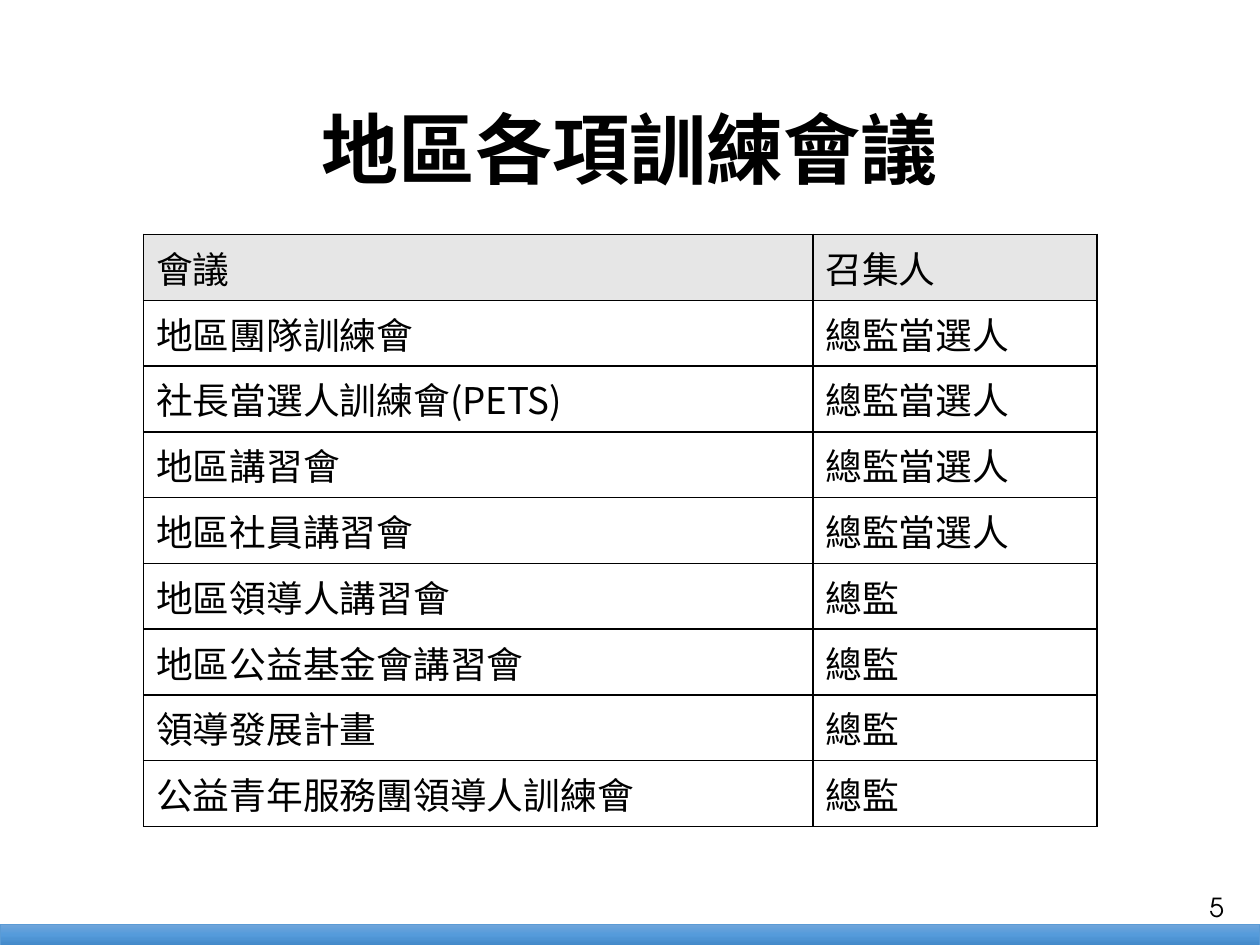
from copy import deepcopy
from lxml import etree
from pptx import Presentation
from pptx.dml.color import RGBColor
from pptx.enum.shapes import MSO_SHAPE
from pptx.enum.text import MSO_ANCHOR, PP_ALIGN
from pptx.oxml.ns import qn
from pptx.util import Pt

RECT = MSO_SHAPE.RECTANGLE
MID = MSO_ANCHOR.MIDDLE
CENTER = PP_ALIGN.CENTER

TITLE = "地區各項訓練會議"
PAGE = "5"
ELECT, CHIEF = "總監當選人", "總監"
ROWS = [
    ("會議", "召集人"),
    ("地區團隊訓練會", ELECT),
    ("社長當選人訓練會(PETS)", ELECT),
    ("地區講習會", ELECT),
    ("地區社員講習會", ELECT),
    ("地區領導人講習會", CHIEF),
    ("地區公益基金會講習會", CHIEF),
    ("領導發展計畫", CHIEF),
    ("公益青年服務團領導人訓練會", CHIEF),
]
COLS = [382.5, 162.5]
ROW_H = 37.6
STOPS = [(0, "71A6DB"), (0.5, "559BDB"), (1, "448ACA")]
HEAD = {"name": "Calibri", "size": Pt(44), "bold": True}
CELL = {"name": "Noto Sans CJK JP", "size": Pt(21), "bold": False}
FOOT = {"name": "TeX Gyre Adventor", "size": Pt(15), "bold": False}


def color(code):
    return RGBColor.from_string(code)


def box(*nums):
    return [Pt(n) for n in nums]


def write(frame, text, form, **para):
    par = frame.paragraphs[0]
    run = par.add_run()
    run.text = text
    for key, val in form.items():
        setattr(run.font, key, val)
    run.font.color.rgb = color("000000")
    for key, val in para.items():
        setattr(par, key, val)
    return run


def border(cell):
    props = cell._tc.get_or_add_tcPr()
    for side in ("lnL", "lnR", "lnT", "lnB"):
        line = etree.SubElement(props, qn("a:" + side), w=str(Pt(1)))
        fill = etree.SubElement(line, qn("a:solidFill"))
        etree.SubElement(fill, qn("a:srgbClr"), val="000000")


def add_bar(slide):
    bar = slide.shapes.add_shape(RECT, *box(0, 528, 720, 12))
    bar.shadow.inherit = False
    bar.line.color.rgb = color("5B9BD5")
    bar.line.width = Pt(0.5)
    bar.fill.gradient()
    bar.fill.gradient_angle = 270
    first = bar._element.spPr.find(".//" + qn("a:gs"))
    first.addnext(deepcopy(first))
    for stop, (pos, code) in zip(bar.fill.gradient_stops, STOPS):
        stop.position = pos
        stop.color.rgb = color(code)


def add_page(slide):
    frame = slide.shapes.add_textbox(*box(680.5, 506, 29.5, 23)).text_frame
    frame.word_wrap = True
    frame.margin_left = frame.margin_right = Pt(5)
    frame.margin_top = frame.margin_bottom = Pt(3)
    write(frame, PAGE, FOOT, alignment=CENTER)


def add_title(slide):
    title = slide.shapes.title
    title.left, title.top, title.width, title.height = box(54, 43, 612, 90)
    title.text_frame.vertical_anchor = MID
    write(title.text_frame, TITLE, HEAD, alignment=CENTER, line_spacing=0.9)


def add_grid(slide):
    area = box(82, 134, sum(COLS), ROW_H * len(ROWS))
    grid = slide.shapes.add_table(len(ROWS), len(COLS), *area).table
    grid.first_row = grid.horz_banding = False
    for col, width in zip(grid.columns, COLS):
        col.width = Pt(width)
    for r, row in enumerate(ROWS):
        grid.rows[r].height = Pt(ROW_H)
        for c, text in enumerate(row):
            cell = grid.cell(r, c)
            border(cell)
            if r == 0:
                cell.fill.solid()
                cell.fill.fore_color.rgb = color("E6E6E6")
            else:
                cell.fill.background()
            run = write(cell.text_frame, text, CELL)
            props = run._r.get_or_add_rPr()
            etree.SubElement(props, qn("a:ea"), typeface=CELL["name"])
            props = cell.text_frame.paragraphs[0]._p.get_or_add_pPr()
            props.set("marL", str(Pt(19)))
            props.set("indent", str(-Pt(19)))


def main():
    deck = Presentation()
    deck.slide_width, deck.slide_height = box(720, 540)
    slide = deck.slides.add_slide(deck.slide_layouts[5])
    add_bar(slide)
    add_page(slide)
    add_title(slide)
    add_grid(slide)
    deck.save("out.pptx")


if __name__ == "__main__":
    main()
